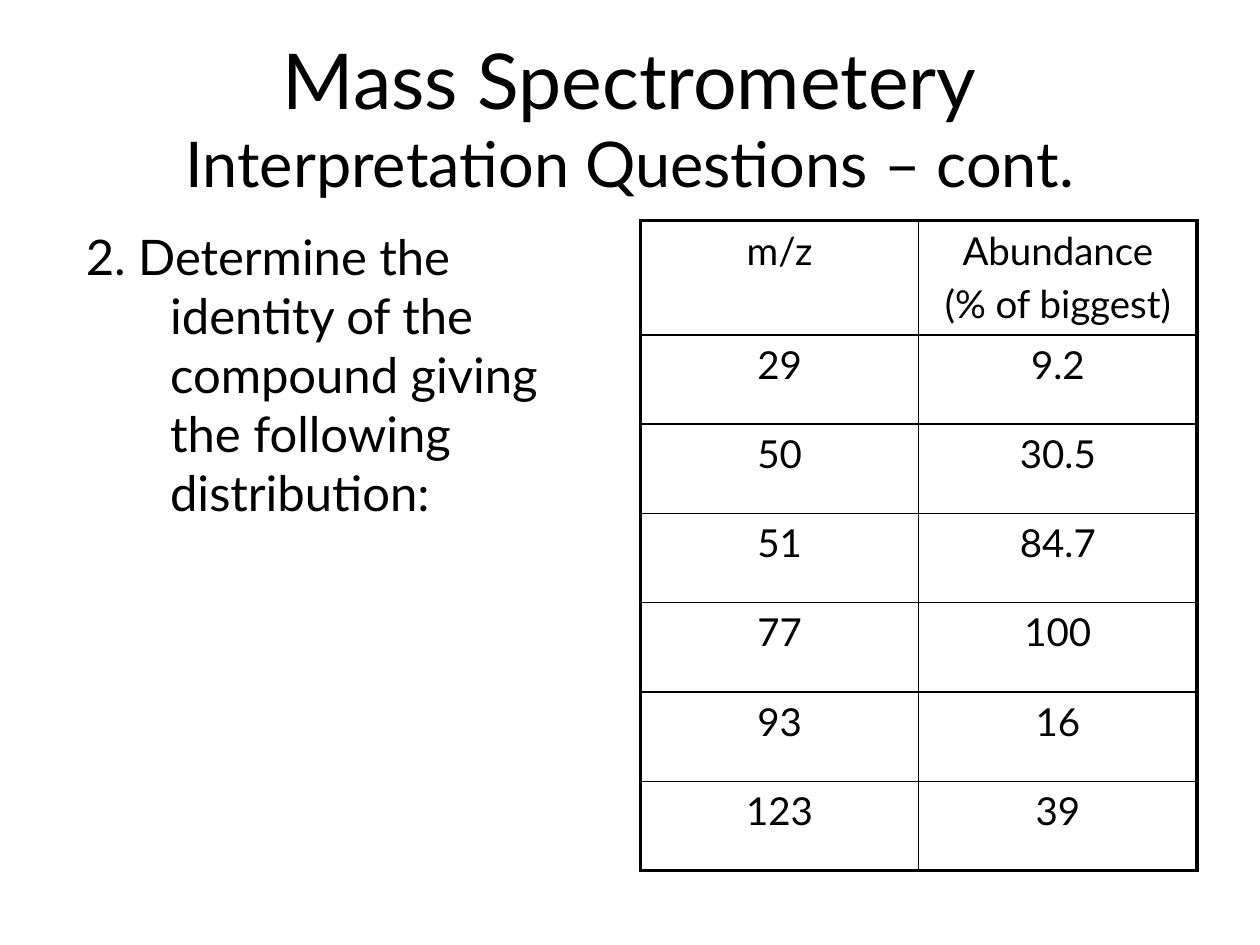
from dataclasses import dataclass

from lxml.etree import SubElement
from pptx import Presentation
from pptx.dml.color import RGBColor
from pptx.enum.text import MSO_ANCHOR, MSO_AUTO_SIZE, PP_ALIGN
from pptx.oxml.ns import qn
from pptx.util import Cm, Pt


@dataclass(frozen=True)
class Theme:
    font: str = "Lato"
    ink: RGBColor = RGBColor(0, 0, 0)
    paper: RGBColor = RGBColor(255, 255, 255)
    title: Pt = Pt(44)
    subtitle: Pt = Pt(36)
    body: Pt = Pt(28)
    cell: Pt = Pt(22)
    outer_line: Pt = Pt(2.25)
    inner_line: Pt = Pt(1)


theme = Theme()


def add_run(p, text, size):
    r = p.add_run()
    r.text = text
    r.font.name = theme.font
    r.font.size = size
    r.font.bold = False
    r.font.color.rgb = theme.ink


def add_border(cell, side, width):
    """Draw one side (L, R, T or B) of a cell; call before filling the cell."""
    ln = SubElement(cell._tc.get_or_add_tcPr(), qn(f"a:ln{side}"), w=str(width))
    fill = SubElement(ln, qn("a:solidFill"))
    SubElement(fill, qn("a:srgbClr"), val=str(theme.ink))


prs = Presentation()
prs.slide_width, prs.slide_height = Cm(25.4), Cm(19.05)
s = prs.slides.add_slide(prs.slide_layouts[5])

# Title
title = s.shapes.title
title.left, title.top, title.width, title.height = Cm(1.27), Cm(0.76), Cm(22.86), Cm(3.18)
tf = title.text_frame
tf.auto_size = MSO_AUTO_SIZE.NONE
tf.vertical_anchor = MSO_ANCHOR.MIDDLE
p = tf.paragraphs[0]
p.alignment = PP_ALIGN.CENTER
add_run(p, "Mass Spectrometery", theme.title)
p.add_line_break()
add_run(p, "Interpretation Questions – cont.", theme.subtitle)

# Question with a hanging indent
sp = s.shapes.add_textbox(Cm(1.48), Cm(4.45), Cm(11.22), Cm(13.55))
tf = sp.text_frame
tf.word_wrap = True
p = tf.paragraphs[0]
pPr = p._p.get_or_add_pPr()
pPr.set("marL", str(Cm(1.7)))
pPr.set("indent", str(-Cm(1.7)))
add_run(p, "2. Determine the identity of the compound giving the following distribution:", theme.body)

# Peak table
peaks = [
    ("m/z", "Abundance\n(% of biggest)"),
    ("29", "9.2"),
    ("50", "30.5"),
    ("51", "84.7"),
    ("77", "100"),
    ("93", "16"),
    ("123", "39"),
]
n_rows, n_cols = len(peaks), len(peaks[0])
header_height, row_height, col_width = Cm(2.3), Cm(1.8), Cm(5.61)
table = s.shapes.add_table(
    n_rows, n_cols, Cm(12.91), Cm(4.45),
    n_cols * col_width, header_height + (n_rows - 1) * row_height,
).table
table.first_row = table.horz_banding = False
for col in table.columns:
    col.width = col_width

for i, values in enumerate(peaks):
    table.rows[i].height = row_height if i else header_height
    for j, value in enumerate(values):
        cell = table.cell(i, j)
        on_edge = {"L": j == 0, "R": j == n_cols - 1, "T": i == 0, "B": i == n_rows - 1}
        for side, outer in on_edge.items():
            add_border(cell, side, theme.outer_line if outer else theme.inner_line)
        cell.fill.solid()
        cell.fill.fore_color.rgb = theme.paper
        tf = cell.text_frame
        for k, line in enumerate(value.split("\n")):
            p = tf.add_paragraph() if k else tf.paragraphs[0]
            p.alignment = PP_ALIGN.CENTER
            if k:
                p.space_before = Pt(4.4)
            add_run(p, line, theme.cell)

prs.save("out.pptx")
